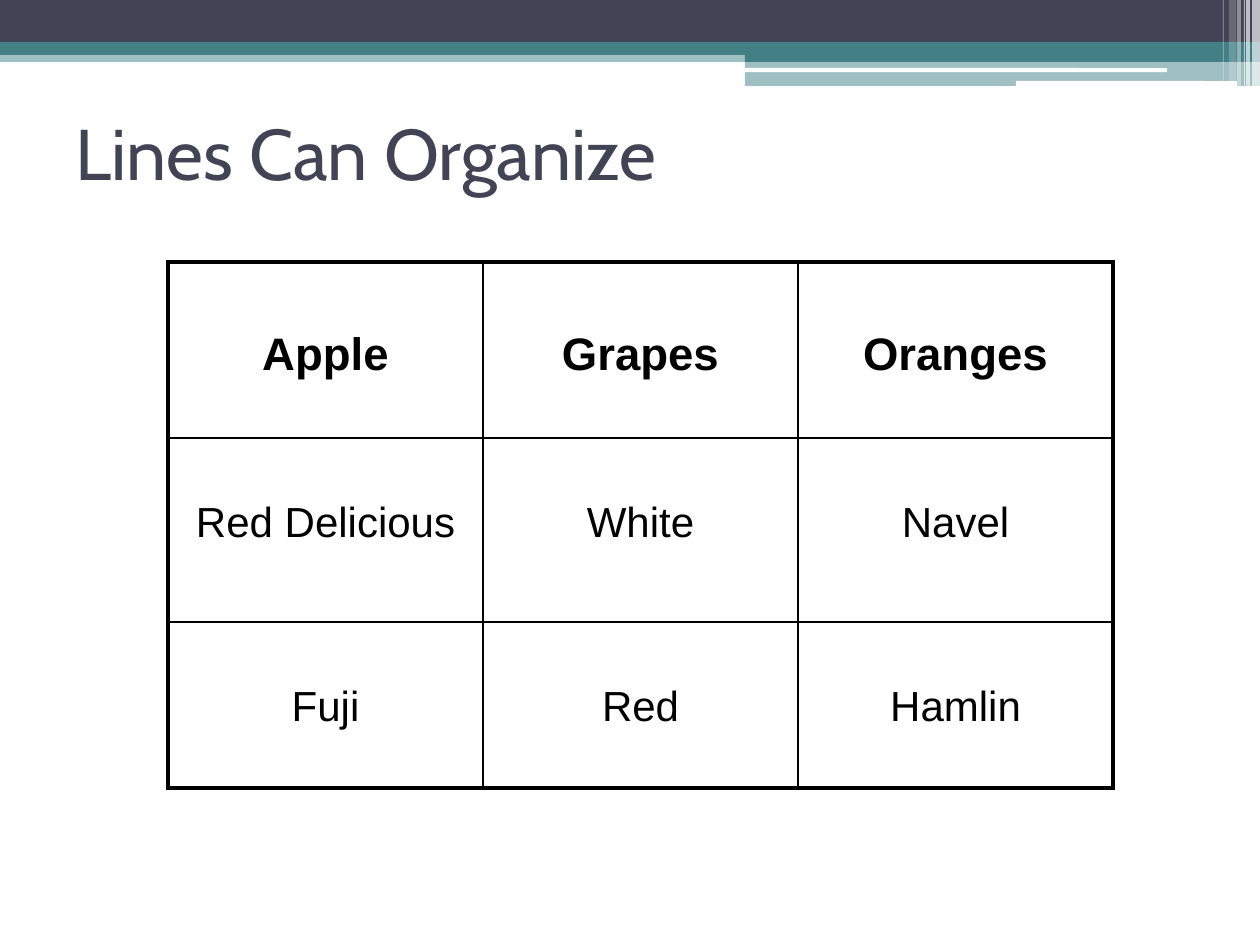
from dataclasses import dataclass

from lxml.etree import SubElement
from pptx import Presentation
from pptx.dml.color import RGBColor
from pptx.enum.shapes import MSO_SHAPE
from pptx.enum.text import MSO_ANCHOR, PP_ALIGN
from pptx.oxml.ns import qn
from pptx.slide import Slide
from pptx.table import _Cell
from pptx.text.text import _Paragraph
from pptx.util import Emu, Pt

EMU_PER_PX = 914400 / 126
NAVY, TEAL, WHITE, BLACK = "424456", "438086", "FFFFFF", "000000"
THICK, THIN = 2.25, 1


@dataclass(frozen=True)
class Band:
    left: int
    top: int
    width: int
    height: int
    color: str
    opacity: int = 100
    rounded: bool = False


@dataclass(frozen=True)
class FruitRow:
    height: int
    text_offset: int
    size: int
    bold: bool
    fruits: tuple[str, str, str]


HEADER_BANDS = [
    Band(0, 50, 1260, 12, TEAL, 50),
    Band(0, 0, 1260, 43, NAVY),
    Band(0, 42, 1260, 13, TEAL),
    Band(745, 49, 515, 13, TEAL),
    Band(745, 61, 515, 25, TEAL, 50),
    Band(745, 68, 422, 4, WHITE, rounded=True),
    Band(1016, 81, 221, 5, WHITE, rounded=True),
    Band(1252, 0, 8, 86, WHITE, 65),
    Band(1246, 0, 4, 86, WHITE, 65),
    Band(1244, 0, 1, 86, WHITE, 60),
    Band(1237, 0, 4, 86, WHITE, 40),
    Band(1229, 0, 7, 81, WHITE, 20),
    Band(1223, 0, 1, 81, WHITE, 30),
]

FRUIT_ROWS = [
    FruitRow(176, 67, 26, True, ("Apple", "Grapes", "Oranges")),
    FruitRow(184, 62, 24, False, ("Red Delicious", "White", "Navel")),
    FruitRow(166, 62, 24, False, ("Fuji", "Red", "Hamlin")),
]


def px(length: int) -> Emu:
    return Emu(round(length * EMU_PER_PX))


def rgb(color: str) -> RGBColor:
    return RGBColor.from_string(color)


def add_band(slide: Slide, band: Band) -> None:
    kind = MSO_SHAPE.ROUNDED_RECTANGLE if band.rounded else MSO_SHAPE.RECTANGLE
    shape = slide.shapes.add_shape(
        kind, px(band.left), px(band.top), px(band.width), px(band.height))
    shape.shadow.inherit = False
    shape.line.fill.background()
    shape.fill.solid()
    shape.fill.fore_color.rgb = rgb(band.color)
    if band.opacity < 100:
        color = shape.fill._xPr.find(qn("a:solidFill"))[0]
        SubElement(color, qn("a:alpha"), val=str(band.opacity * 1000))


def add_run(paragraph: _Paragraph, text: str, font: str, size: int,
            color: str, bold: bool = False) -> None:
    run = paragraph.add_run()
    run.text = text
    run.font.name = font
    run.font.size = Pt(size)
    run.font.bold = bold
    run.font.color.rgb = rgb(color)


def add_title(slide: Slide, text: str) -> None:
    title = slide.shapes.add_textbox(px(63), px(73), px(1134), px(158))
    title.text_frame.word_wrap = True
    title.text_frame.vertical_anchor = MSO_ANCHOR.MIDDLE
    add_run(title.text_frame.paragraphs[0], text, "Cabin", 41, NAVY)


def set_borders(cell: _Cell, widths: dict[str, float]) -> None:
    properties = cell._tc.get_or_add_tcPr()
    for side, width in widths.items():
        line = SubElement(properties, qn(f"a:ln{side}"), w=str(Pt(width)))
        fill = SubElement(line, qn("a:solidFill"))
        SubElement(fill, qn("a:srgbClr"), val=BLACK)


def add_fruit_table(slide: Slide, rows: list[FruitRow]) -> None:
    """Draw the grid with a thick outline and thin inner lines."""
    column_count, column_width = len(rows[0].fruits), 315
    last_row, last_column = len(rows) - 1, column_count - 1
    table = slide.shapes.add_table(
        len(rows), column_count, px(168), px(262),
        px(column_count * column_width), px(sum(row.height for row in rows))).table
    table.first_row = table.horz_banding = False
    for column in table.columns:
        column.width = px(column_width)
    for r, row in enumerate(rows):
        table.rows[r].height = px(row.height)
        for c, fruit in enumerate(row.fruits):
            cell = table.cell(r, c)
            set_borders(cell, {
                "L": THICK if c == 0 else THIN,
                "R": THICK if c == last_column else THIN,
                "T": THICK if r == 0 else THIN,
                "B": THICK if r == last_row else THIN,
            })
            cell.fill.background()
            cell.margin_top = px(row.text_offset)
            paragraph = cell.text_frame.paragraphs[0]
            paragraph.alignment = PP_ALIGN.CENTER
            add_run(paragraph, fruit, "Arial", row.size, BLACK, row.bold)


def main() -> None:
    presentation = Presentation()
    presentation.slide_width, presentation.slide_height = px(1260), px(945)
    slide = presentation.slides.add_slide(presentation.slide_layouts[6])
    for band in HEADER_BANDS:
        add_band(slide, band)
    add_title(slide, "Lines Can Organize")
    add_fruit_table(slide, FRUIT_ROWS)
    presentation.save("out.pptx")


if __name__ == "__main__":
    main()
